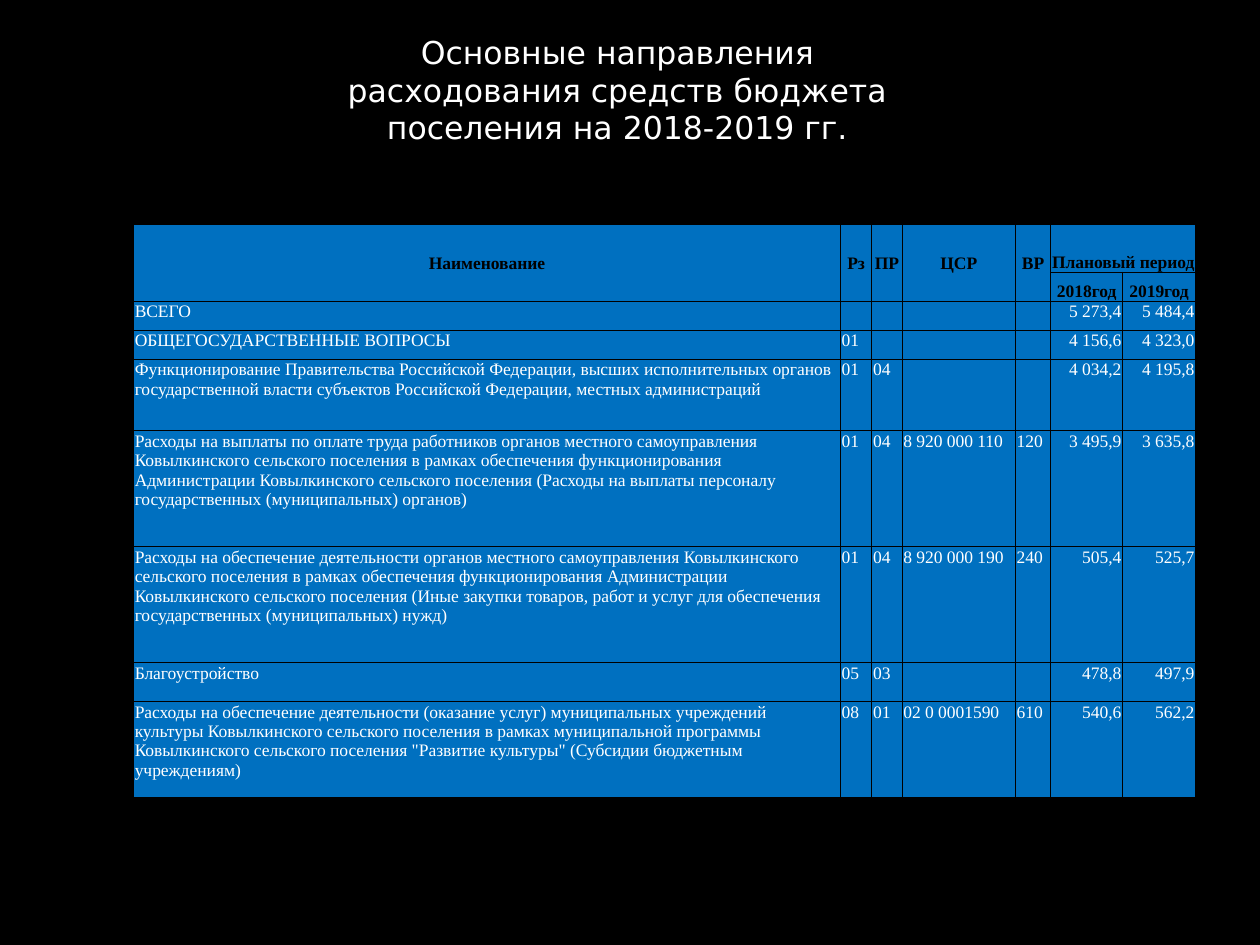
from lxml import etree
from pptx import Presentation
from pptx.dml.color import RGBColor
from pptx.enum import text
from pptx.oxml.ns import qn
from pptx.util import Inches, Pt

COLORS = {"back": "000000", "cell": "0070C0", "head": "000000",
          "body": "FFFFFF", "border": "000000"}
TITLE = "Основные направления расходования средств бюджета поселения на 2018-2019 гг."
COLS = [5.61, 0.25, 0.24, 0.9, 0.28, 0.57, 0.58]
ROWS = [0.38, 0.23, 0.23, 0.23, 0.57, 0.92, 0.92, 0.31, 0.76]
HEAD = 2
BUDGET = [
    ["Наименование", "Рз", "ПР", "ЦСР", "ВР", "Плановый период", ""],
    ["", "", "", "", "", "2018год", "2019год"],
    ["ВСЕГО", "", "", "", "", "5 273,4", "5 484,4"],
    ["ОБЩЕГОСУДАРСТВЕННЫЕ ВОПРОСЫ", "01", "", "", "", "4 156,6", "4 323,0"],
    ["Функционирование Правительства Российской Федерации, высших исполнительных "
     "органов государственной власти субъектов Российской Федерации, местных "
     "администраций", "01", "04", "", "", "4 034,2", "4 195,8"],
    ["Расходы на выплаты по оплате труда работников органов местного самоуправления "
     "Ковылкинского сельского поселения в рамках обеспечения функционирования "
     "Администрации Ковылкинского сельского поселения (Расходы на выплаты персоналу "
     "государственных (муниципальных) органов)",
     "01", "04", "8 920 000 110", "120", "3 495,9", "3 635,8"],
    ["Расходы на обеспечение деятельности органов местного самоуправления "
     "Ковылкинского сельского поселения в рамках обеспечения функционирования "
     "Администрации Ковылкинского сельского поселения (Иные закупки товаров, работ "
     "и услуг для обеспечения государственных (муниципальных) нужд)",
     "01", "04", "8 920 000 190", "240", "505,4", "525,7"],
    ["Благоустройство", "05", "03", "", "", "478,8", "497,9"],
    ["Расходы на обеспечение деятельности (оказание услуг) муниципальных учреждений "
     "культуры Ковылкинского сельского поселения в рамках муниципальной программы "
     "Ковылкинского сельского поселения \"Развитие культуры\" (Субсидии бюджетным "
     "учреждениям)", "08", "01", "02 0 0001590", "610", "540,6", "562,2"],
]


def apply(obj, values):
    for name, value in values.items():
        setattr(obj, name, value)


def write(p, words, color, align, **font):
    p.alignment = align
    r = p.add_run()
    r.text = words
    apply(r.font, font)
    r.font.color.rgb = RGBColor.from_string(COLORS[color])


def add_borders(cell):
    tc_pr = cell._tc.get_or_add_tcPr()
    for side in ("lnL", "lnR", "lnT", "lnB"):
        ln = etree.SubElement(tc_pr, qn(f"a:{side}"), w=str(Pt(0.5)))
        fill = etree.SubElement(ln, qn("a:solidFill"))
        etree.SubElement(fill, qn("a:srgbClr"), val=COLORS["border"])


def add_title(slide, left, top, width, height):
    sp = slide.shapes.title
    apply(sp, dict(left=left, top=top, width=width, height=height))
    tf = sp.text_frame
    apply(tf, dict(word_wrap=True, vertical_anchor=text.MSO_ANCHOR.TOP,
                   auto_size=text.MSO_AUTO_SIZE.SHAPE_TO_FIT_TEXT))
    write(tf.paragraphs[0], TITLE, "body", text.PP_ALIGN.CENTER,
          name="DejaVu Sans", size=Pt(18))


def fill_cell(cell, words, row, col):
    head = row < HEAD
    number = col >= 5
    apply(cell, dict(margin_left=Inches(0.01), margin_right=Inches(0.01),
                     margin_top=Inches(0.01), margin_bottom=0))
    add_borders(cell)
    cell.fill.solid()
    cell.fill.fore_color.rgb = RGBColor.from_string(COLORS["cell"])
    if head:
        cell.vertical_anchor = text.MSO_ANCHOR.BOTTOM if number else text.MSO_ANCHOR.MIDDLE
    p = cell.text_frame.paragraphs[0]
    if not words:
        etree.SubElement(p._p, qn("a:endParaRPr"), sz="1000")
        return
    align = text.PP_ALIGN.RIGHT if number else text.PP_ALIGN.LEFT
    write(p, words, "head" if head else "body",
          text.PP_ALIGN.CENTER if head else align,
          name="Times New Roman", size=Pt(10), bold=head)


def add_budget_table(slide, left, top, width, height):
    table = slide.shapes.add_table(len(ROWS), len(COLS), left, top, width, height).table
    apply(table, dict(first_row=False, horz_banding=False))
    for column, size in zip(table.columns, COLS):
        column.width = Inches(size)
    for row, size in zip(table.rows, ROWS):
        row.height = Inches(size)
    for i, row in enumerate(BUDGET):
        for j, words in enumerate(row):
            fill_cell(table.cell(i, j), words, i, j)
    for j in range(5):
        table.cell(0, j).merge(table.cell(1, j))
    table.cell(0, 5).merge(table.cell(0, 6))


def main():
    prs = Presentation()
    apply(prs, dict(slide_width=Inches(10), slide_height=Inches(7.5)))
    slide = prs.slides.add_slide(prs.slide_layouts[5])
    slide.background.fill.solid()
    slide.background.fill.fore_color.rgb = RGBColor.from_string(COLORS["back"])
    add_budget_table(slide, Inches(1.06), Inches(1.78), Inches(8.43), Inches(4.57))
    add_title(slide, Inches(2.4), Inches(0.21), Inches(5), Inches(1.01))
    prs.save("out.pptx")


if __name__ == "__main__":
    main()
